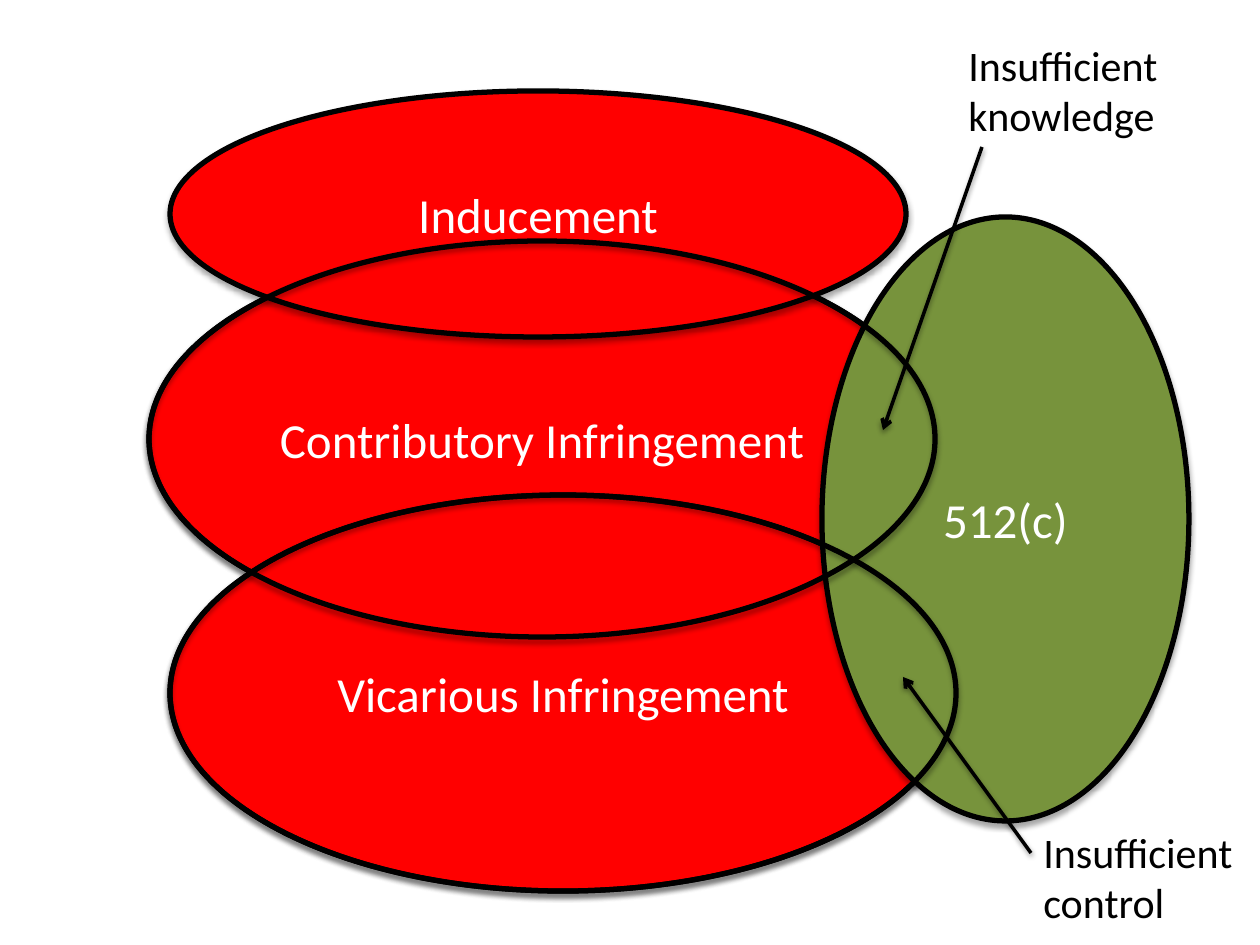
from dataclasses import dataclass, replace

import lxml.etree
import pptx
import pptx.dml.color
import pptx.enum.shapes
import pptx.enum.text
import pptx.oxml
import pptx.oxml.ns
import pptx.util

PX_PER_INCH = 126
EMU_PER_PX = 914400 / PX_PER_INCH


@dataclass(frozen=True)
class Theme:
    font: str = "Calibri"
    black: str = "000000"
    white: str = "FFFFFF"
    liability: str = "FF0000"
    safe_harbor: str = "77933C"
    oval_size: int = 28
    note_size: int = 24
    oval_line: int = 3
    arrow_line: int = 2


@dataclass(frozen=True)
class Oval:
    left: int
    top: int
    width: int
    height: int
    fill: str | None = None
    label: str = ""


@dataclass(frozen=True)
class Note:
    left: int
    top: int
    width: int
    height: int
    label: str
    arrow_start: tuple[int, int]
    arrow_end: tuple[int, int]


THEME = Theme()

CONTRIBUTORY = Oval(149, 241, 786, 396, THEME.liability, "Contributory Infringement")
VICARIOUS = Oval(170, 495, 786, 396, THEME.liability, "Vicarious Infringement")
INDUCEMENT = Oval(170, 91, 736, 246, THEME.liability, "Inducement")
SAFE_HARBOR = Oval(822, 217, 367, 604, THEME.safe_harbor, "512(c)")

OVALS = [CONTRIBUTORY, VICARIOUS, INDUCEMENT, SAFE_HARBOR] + [
    replace(oval, fill=None, label="") for oval in (CONTRIBUTORY, VICARIOUS)
]

NOTES = [
    Note(956, 33, 217, 115, "Insufficient\nknowledge", (982, 147), (883, 430)),
    Note(1031, 820, 217, 115, "Insufficient\ncontrol", (1031, 853), (903, 677)),
]


def px(length: int) -> pptx.util.Emu:
    return pptx.util.Emu(round(length * EMU_PER_PX))


def rgb(color: str) -> pptx.dml.color.RGBColor:
    return pptx.dml.color.RGBColor.from_string(color)


def style_line(line, width: int) -> None:
    line.color.rgb = rgb(THEME.black)
    line.width = pptx.util.Pt(width)


def add_shadow(shape, distance: float, opacity: int) -> None:
    properties = shape._element.spPr
    effects = pptx.oxml.parse_xml(
        f'<a:effectLst {pptx.oxml.ns.nsdecls("a")}>'
        f'<a:outerShdw blurRad="{pptx.util.Pt(3.1)}" dist="{pptx.util.Pt(distance)}"'
        ' dir="5400000" rotWithShape="0">'
        f'<a:srgbClr val="{THEME.black}"><a:alpha val="{opacity * 1000}"/></a:srgbClr>'
        "</a:outerShdw></a:effectLst>"
    )
    properties.append(effects)


def write_text(frame, text: str, size: int, color: str, alignment) -> None:
    frame.text = text
    for para in frame.paragraphs:
        para.alignment = alignment
        for span in para.runs:
            span.font.name = THEME.font
            span.font.size = pptx.util.Pt(size)
            span.font.color.rgb = rgb(color)


def draw_oval(page, oval: Oval) -> None:
    shape = page.shapes.add_shape(
        pptx.enum.shapes.MSO_SHAPE.OVAL,
        px(oval.left), px(oval.top), px(oval.width), px(oval.height),
    )
    if oval.fill:
        shape.fill.solid()
        shape.fill.fore_color.rgb = rgb(oval.fill)
    else:
        shape.fill.background()
    style_line(shape.line, THEME.oval_line)
    add_shadow(shape, 1.8, 35)
    if oval.label:
        shape.text_frame.vertical_anchor = pptx.enum.text.MSO_ANCHOR.MIDDLE
        write_text(shape.text_frame, oval.label, THEME.oval_size, THEME.white,
                   pptx.enum.text.PP_ALIGN.CENTER)


def draw_note(page, note: Note) -> None:
    box = page.shapes.add_textbox(
        px(note.left), px(note.top), px(note.width), px(note.height)
    )
    box.text_frame.word_wrap = False
    box.text_frame.auto_size = pptx.enum.text.MSO_AUTO_SIZE.SHAPE_TO_FIT_TEXT
    write_text(box.text_frame, note.label, THEME.note_size, THEME.black,
               pptx.enum.text.PP_ALIGN.LEFT)

    arrow = page.shapes.add_connector(
        pptx.enum.shapes.MSO_CONNECTOR.STRAIGHT,
        *map(px, note.arrow_start + note.arrow_end),
    )
    style_line(arrow.line, THEME.arrow_line)
    outline = arrow._element.spPr.find(pptx.oxml.ns.qn("a:ln"))
    lxml.etree.SubElement(outline, pptx.oxml.ns.qn("a:tailEnd"), type="arrow")
    add_shadow(arrow, 1.6, 38)


def main() -> None:
    deck = pptx.Presentation()
    deck.slide_width, deck.slide_height = px(1260), px(945)
    page = deck.slides.add_slide(deck.slide_layouts[6])
    for oval in OVALS:
        draw_oval(page, oval)
    for note in NOTES:
        draw_note(page, note)
    deck.save("out.pptx")


if __name__ == "__main__":
    main()
